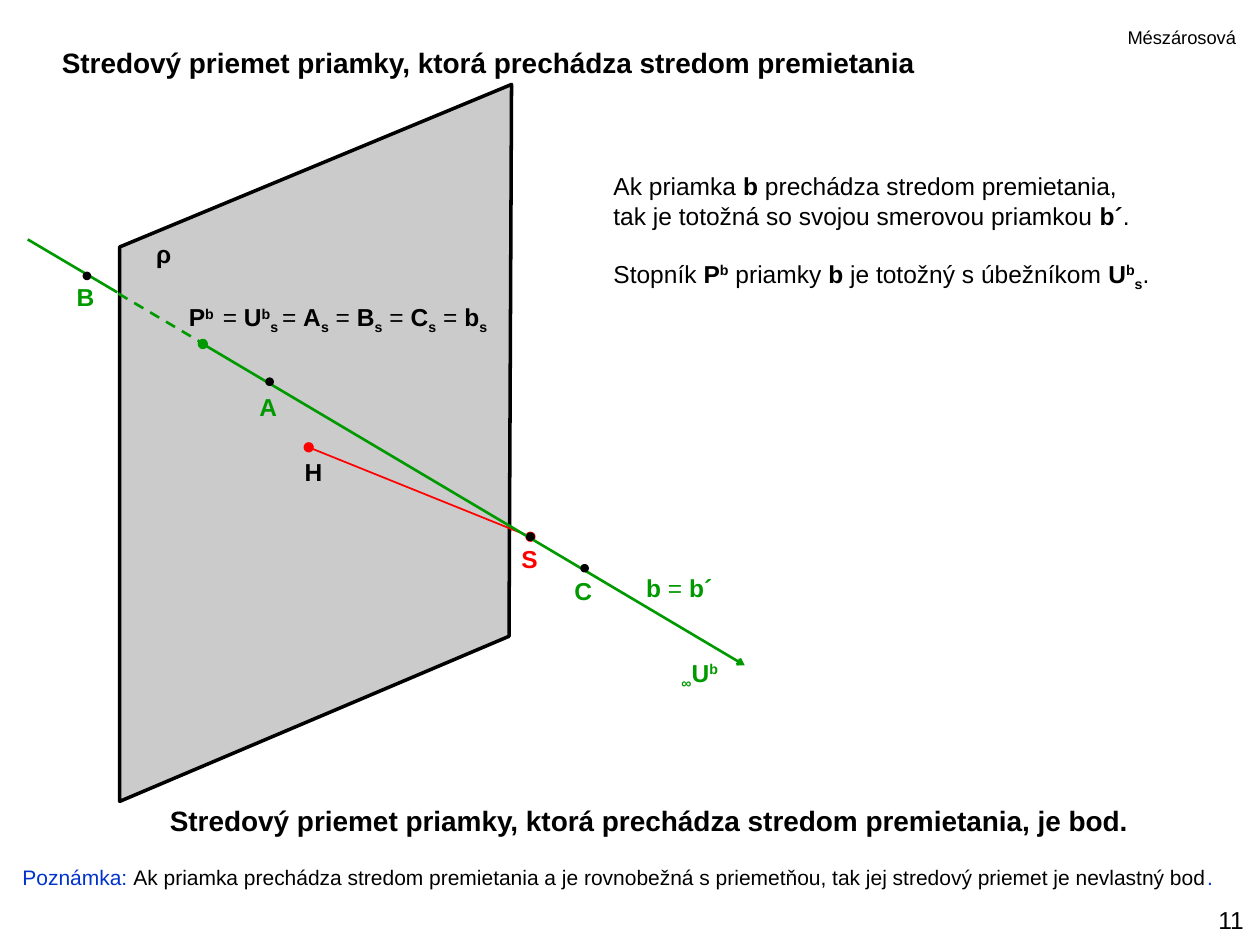
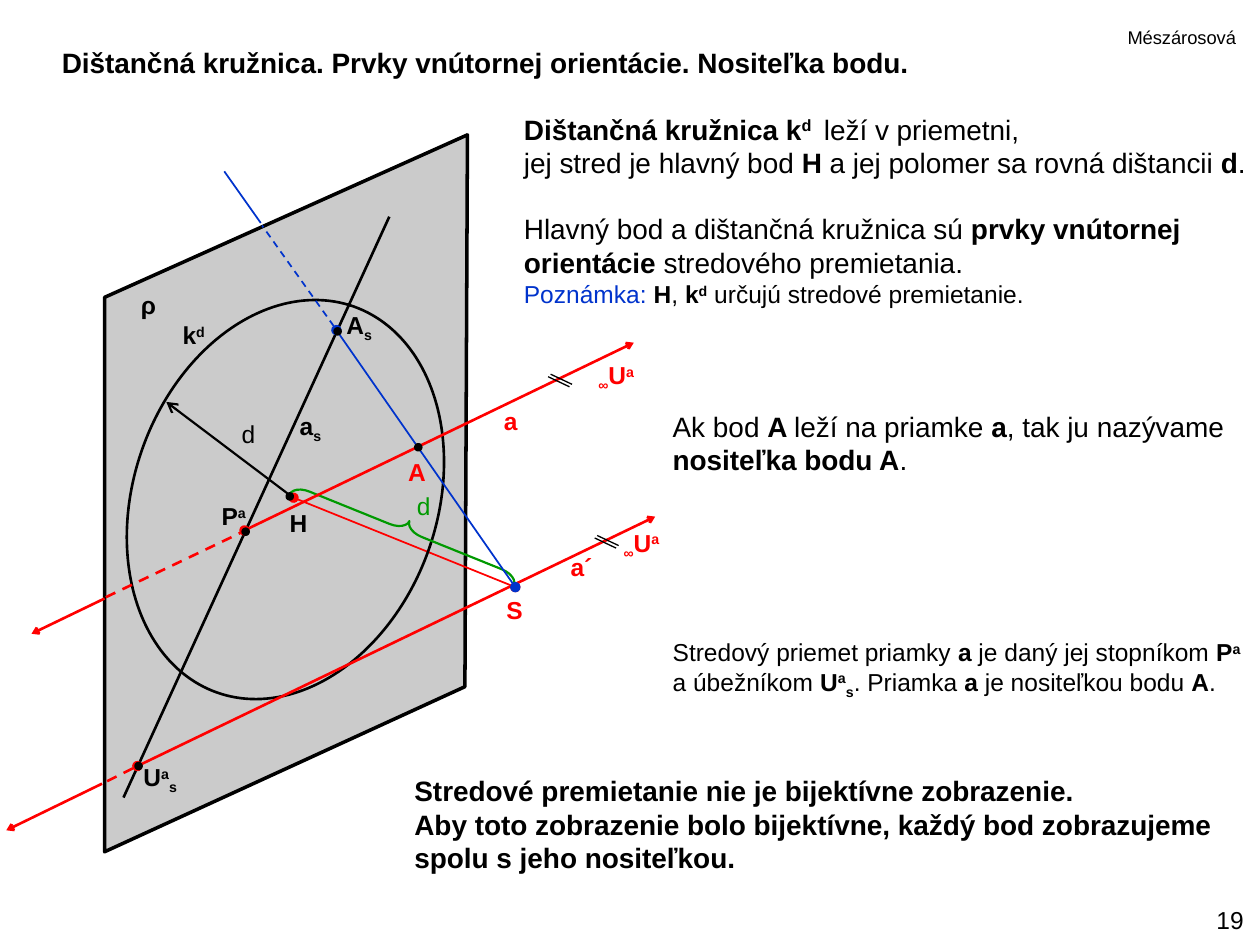
import dataclasses
import itertools

import pptx
import pptx.dml.color
import pptx.enum.dml
import pptx.enum.shapes
import pptx.enum.text
import pptx.oxml.ns
import pptx.util
from lxml import etree


@dataclasses.dataclass(frozen=True)
class Theme:
    """Colours, font, type sizes and line widths shared by the slides."""
    black: str = "000000"
    red: str = "FF0000"
    green: str = "009900"
    blue: str = "0033CC"
    plane: str = "A6A6A6"
    plane_opacity: int = 58
    font: str = "Arial"
    heading: float = 16
    body: float = 14
    remark: float = 12
    author: float = 10.5
    thick: float = 2
    ray: float = 1.5
    measure: float = 1.25
    thin: float = 1
    tick: float = 0.75


THEME = Theme()
COLUMNS, ROWS = 100, 75
WIDTH, HEIGHT = pptx.util.Inches(10), pptx.util.Inches(7.5)
LABEL_ROWS = 3.4
MAIN_POINT, CENTRE = (15, 28.8), (32.6, 35.9)
LINE_ENDS = {"dot": ("oval", "med"), "tip": ("arrow", "sm"), "wide tip": ("arrow", "med")}
MARKS = {"*": "bold", "^": "superscript", "_": "subscript", "~": "note"}


@dataclasses.dataclass(frozen=True)
class Box:
    """Area of the slide measured in grid columns and rows."""
    left: float
    top: float
    width: float
    height: float

    def inside(self, left, top, width, height):
        """Return a box whose place is counted from this box's corner."""
        return Box(self.left + left, self.top + top, width, height)

    def point(self, column, row):
        """Return slide coordinates of a point counted from the corner."""
        return (round((self.left + column) * WIDTH / COLUMNS),
                round((self.top + row) * HEIGHT / ROWS))

    def frame(self):
        """Return left, top, width and height in slide units."""
        return (*self.point(0, 0), round(self.width * WIDTH / COLUMNS),
                round(self.height * HEIGHT / ROWS))


def rgb(colour):
    """Turn a hexadecimal string into a colour."""
    return pptx.dml.color.RGBColor.from_string(colour)


def set_line(line, colour, width):
    """Give an outline its colour and its width in points."""
    line.color.rgb = rgb(colour)
    line.width = pptx.util.Pt(width)


def format_run(run, size, colour, marks=()):
    """Format one run according to its active marks."""
    run.font.name = THEME.font
    run.font.size = pptx.util.Pt(size)
    run.font.bold = "bold" in marks
    run.font.color.rgb = rgb(THEME.blue if "note" in marks else colour)
    baseline = 30 if "superscript" in marks else -25 if "subscript" in marks else 0
    if baseline:
        run.font._element.set("baseline", str(baseline * 1000))


def write_marked(paragraph, text, size, colour):
    """Write text in which marks switch bold, raised, lowered and note style."""
    active, pieces = frozenset(), []
    for character in text:
        if character in MARKS:
            active ^= {MARKS[character]}
        else:
            pieces.append((active, character))
    for marks, group in itertools.groupby(pieces, key=lambda piece: piece[0]):
        run = paragraph.add_run()
        run.text = "".join(character for _, character in group)
        format_run(run, size, colour, marks)


def add_text(slide, box, lines, size=THEME.body, colour=THEME.black, wrap=False, gaps=()):
    """Add a text box with a paragraph per line; gaps maps lines to space before."""
    text_frame = slide.shapes.add_textbox(*box.frame()).text_frame
    text_frame.word_wrap = wrap
    text_frame.auto_size = pptx.enum.text.MSO_AUTO_SIZE.SHAPE_TO_FIT_TEXT
    for index, line in enumerate(lines):
        paragraph = text_frame.add_paragraph() if index else text_frame.paragraphs[0]
        write_marked(paragraph, line, size, colour)
        if index in gaps:
            paragraph.space_before = pptx.util.Pt(size * 1.17)
    return text_frame


def add_labels(slide, box, colour, labels):
    """Add short labels of one colour, given as text, column, row and width."""
    for text, column, row, width in labels:
        add_text(slide, box.inside(column, row, width, LABEL_ROWS), [text], colour=colour)


def add_line(slide, box, start, end, colour, width=THEME.ray, head=None, tail=None, dashed=False):
    """Draw a straight line between two points of the box."""
    connector = slide.shapes.add_connector(
        pptx.enum.shapes.MSO_CONNECTOR.STRAIGHT, *box.point(*start), *box.point(*end))
    set_line(connector.line, colour, width)
    if dashed:
        connector.line.dash_style = pptx.enum.dml.MSO_LINE.DASH
    outline = connector.line._get_or_add_ln()
    for tag, name in (("a:headEnd", head), ("a:tailEnd", tail)):
        if name:
            kind, size = LINE_ENDS[name]
            etree.SubElement(outline, pptx.oxml.ns.qn(tag), type=kind, w=size, len=size)
    etree.SubElement(connector._element.spPr, pptx.oxml.ns.qn("a:effectLst"))


def add_outline(slide, box, kind, colour, width):
    """Add an unfilled preset shape."""
    shape = slide.shapes.add_shape(kind, *box.frame())
    shape.shadow.inherit = False
    shape.fill.background()
    set_line(shape.line, colour, width)
    return shape


def add_dots(slide, box, points):
    """Mark points with small black discs."""
    for column, row in points:
        dot = add_outline(slide, box.inside(column - 0.2, row - 0.2, 0.4, 0.4),
                          pptx.enum.shapes.MSO_SHAPE.OVAL, THEME.black, THEME.thick)
        dot.fill.solid()
        dot.fill.fore_color.rgb = rgb(THEME.black)


def add_projection(slide, box):
    """Draw the image plane with its main point and the projection centre."""
    right = box.width
    builder = slide.shapes.build_freeform(*box.point(0, 12.9))
    corners = [(0, box.height), (right - 0.2, 43.8), (right, 0)]
    builder.add_line_segments([box.point(*corner) for corner in corners])
    plane = builder.convert_to_shape()
    plane.shadow.inherit = False
    plane.fill.solid()
    plane.fill.fore_color.rgb = rgb(THEME.plane)
    colour = plane._element.spPr.find(".//" + pptx.oxml.ns.qn("a:srgbClr"))
    etree.SubElement(colour, pptx.oxml.ns.qn("a:alpha"), val=str(THEME.plane_opacity * 1000))
    set_line(plane.line, THEME.black, THEME.thick)
    add_line(slide, box, MAIN_POINT, CENTRE, THEME.red, THEME.thin, "dot", "dot")
    add_dots(slide, box, [CENTRE])
    add_labels(slide, box, THEME.black, [("*ρ*", 1.9, 11.8, 3.1), ("*H*", 13.7, 29.1, 3.4)])
    add_labels(slide, box, THEME.red, [("*S*", 30.9, 36, 3.3)])


def add_titled_slide(presentation, title, number):
    """Add a slide with its title, author and page number."""
    slide = presentation.slides.add_slide(presentation.slide_layouts[5])
    shape = slide.shapes.title
    shape.left, shape.top, shape.width, shape.height = Box(3.9, 3.1, 71.3, 3.7).frame()
    text_frame = shape.text_frame
    text_frame.text = title
    text_frame.word_wrap = False
    text_frame.auto_size = pptx.enum.text.MSO_AUTO_SIZE.NONE
    text_frame.vertical_anchor = pptx.enum.text.MSO_ANCHOR.TOP
    paragraph = text_frame.paragraphs[0]
    paragraph.alignment = pptx.enum.text.PP_ALIGN.LEFT
    format_run(paragraph.runs[0], THEME.heading, THEME.black, {"bold"})
    add_text(slide, Box(88.5, 1.6, 10.8, 2.8), ["Mészárosová"], THEME.author)
    page = add_text(slide, Box(95.3, 71.3, 4.4, LABEL_ROWS), [number])
    page.paragraphs[0].alignment = pptx.enum.text.PP_ALIGN.RIGHT
    return slide


def add_central_ray(slide, box):
    """Draw line b through the projection centre with its points."""
    add_projection(slide, box)
    add_line(slide, box, (-0.1, 16.6), (6.5, 20.5), THEME.green, dashed=True)
    add_line(slide, box, (-7.3, 12.3), (-0.2, 16.5), THEME.green)
    add_line(slide, box, (6.6, 20.6), (49.6, 46.1), THEME.green, head="dot", tail="tip")
    add_dots(slide, box, [(11.9, 23.6), (-2.6, 15.2), CENTRE, (36.9, 38.4)])
    add_labels(slide, box, THEME.black, [
        ("*P^b^*", 4.5, 16.8, 4.1),
        ("= *U^b^_s_*", 7.2, 16.8, 6.6),
        ("= *A_s_* = *B_s_* = *C_s_* = *b_s_*", 11.9, 16.8, 18.8)])
    add_labels(slide, box, THEME.green, [
        ("*b* = *b´*", 40.8, 38.3, 7.8), ("*_∞_U^b^*", 43.6, 45, 5.2),
        ("*A*", 10.1, 23.9, 3.4), ("*B*", -4.4, 15.2, 3.4), ("*C*", 35.1, 38.5, 3.4)])


def add_distance_circle(slide, box):
    """Draw the distance circle, its radius and the matching brace."""
    circle = add_outline(slide, box.inside(2.3, 12.7, 24.1, 32.5),
                         pptx.enum.shapes.MSO_SHAPE.OVAL, THEME.black, THEME.ray)
    circle.rotation = 19.5
    add_line(slide, box, (4.9, 21.2), (14.7, 28.6), THEME.black, THEME.measure, head="wide tip")
    brace = add_outline(slide, box.inside(23.1, 21.8, 1.6, 19.2),
                        pptx.enum.shapes.MSO_SHAPE.RIGHT_BRACE, THEME.green, THEME.measure)
    brace.adjustments[0], brace.adjustments[1] = 0.85, 0.5
    brace.rotation = 112
    brace._element.spPr.xfrm.set("flipH", "1")
    add_labels(slide, box, THEME.black, [("*k^d^*", 5.2, 14.2, 4.1), ("d", 9.9, 22.1, 3.1)])
    add_labels(slide, box, THEME.green, [("d", 23.8, 27.8, 3.1)])


def add_carrier_rays(slide, box):
    """Draw line a, its direction line, the projecting ray and their points."""
    for start, end in [((0.2, 51.3), (2.6, 50.1)), ((0.1, 36.7), (11.4, 31.3))]:
        add_line(slide, box, start, end, THEME.red, dashed=True)
    for start, end in [((0, 36.8), (-5.8, 39.6)), ((-0.2, 51.5), (-7.8, 55.2))]:
        add_line(slide, box, start, end, THEME.red, tail="tip")
    add_line(slide, box, (22.6, 6.5), (1.5, 52.6), THEME.black)
    for start, end in [((2.6, 50.1), (43.7, 30.3)), ((11.1, 31.4), (42, 16.5))]:
        add_line(slide, box, start, end, THEME.red, head="dot", tail="tip")
    add_line(slide, box, (18.2, 15.2), (12.5, 7.2), THEME.blue, THEME.thin, dashed=True)
    add_line(slide, box, (12.4, 7), (9.5, 2.9), THEME.blue, THEME.thin)
    add_line(slide, box, CENTRE, (18.4, 15.5), THEME.blue, THEME.thin, "dot", "dot")
    for column, row in [(35.4, 19), (39.1, 31.8)]:
        for shift in (0, 0.2):
            add_line(slide, box, (column - shift, row + shift),
                     (column - shift + 1.7, row + shift + 0.8), THEME.black, THEME.tick)
    add_dots(slide, box, [(24.9, 24.8), (14.7, 28.7), (2.7, 50.1), (11.2, 31.5), (18.5, 15.6)])
    add_labels(slide, box, THEME.black, [
        ("*P^a^*", 8.3, 28.6, 4.1), ("*A_s_*", 18.2, 13.4, 4.7),
        ("*U^a^_s_*", 2.1, 49.3, 4.9), ("*a_s_*", 14.5, 21.4, 3.8)])
    add_labels(slide, box, THEME.red, [
        ("*a*", 30.7, 21, 3.1), ("*a´*", 36, 32.6, 3.8), ("*A*", 23.1, 25.1, 3.4),
        ("*_∞_U^a^*", 38.2, 17.4, 5.1), ("*_∞_U^a^*", 40.2, 30.7, 5.1)])


def build_central_line_slide(presentation):
    """Build the slide about a line through the projection centre."""
    slide = add_titled_slide(
        presentation, "Stredový priemet priamky, ktorá prechádza stredom premietania", "11")
    add_central_ray(slide, Box(9.5, 6.7, 31.1, 56.9))
    add_text(slide, Box(47.7, 13.1, 46.2, 10.4), [
        "Ak priamka *b *prechádza stredom premietania,",
        "tak je totožná so svojou smerovou priamkou *b´*.",
        "Stopník *P^b^* priamky *b *je totožný s úbežníkom *U^b^_s_*."], gaps={2})
    add_text(slide, Box(12.5, 63.3, 81, 3.7), [
        "*Stredový priemet priamky, ktorá prechádza stredom premietania, je bod.*"], THEME.heading)
    add_text(slide, Box(0.8, 68.1, 97.2, 3), [
        "~Poznámka: ~Ak priamka prechádza stredom premietania a je rovnobežná "
        "s priemetňou, tak jej stredový priemet je nevlastný bod~.~"], THEME.remark)


def build_distance_circle_slide(presentation):
    """Build the slide about the distance circle and the carrier of a point."""
    slide = add_titled_slide(
        presentation, "Dištančná kružnica. Prvky vnútornej orientácie. Nositeľka bodu.", "19")
    diagram = Box(8.3, 10.7, 28.8, 56.9)
    add_projection(slide, diagram)
    add_distance_circle(slide, diagram)
    add_carrier_rays(slide, diagram)
    definition = add_text(slide, Box(40.6, 8.4, 59.4, 16.8), [
        "*Dištančná kružnica k^d ^* leží v priemetni,",
        "jej stred je hlavný bod *H *a jej polomer sa rovná dištancii *d*.",
        "Hlavný bod a dištančná kružnica sú *prvky vnútornej orientácie *stredového premietania.",
        "~Poznámka: ~*H*, *k^d^* určujú stredové premietanie."],
        THEME.heading, wrap=True, gaps={2})
    for run in definition.paragraphs[3].runs:
        run.font.size = pptx.util.Pt(THEME.body)
    add_text(slide, Box(52.4, 32, 47.2, 6.4), [
        "Ak bod *A *leží na priamke *a*, tak ju nazývame *nositeľka bodu A*."],
        THEME.heading, wrap=True)
    add_text(slide, Box(52.4, 50.1, 47.5, 5.7), [
        "Stredový priemet priamky *a* je daný jej stopníkom *P^a^*",
        "a úbežníkom *U^a^_s_*. Priamka *a *je nositeľkou bodu *A*."], wrap=True)
    add_text(slide, Box(31.9, 60.9, 68.1, 9.1), [
        "*Stredové premietanie nie je bijektívne zobrazenie.*",
        "*Aby toto zobrazenie bolo bijektívne, každý bod zobrazujeme*",
        "*spolu s jeho nositeľkou.*"], THEME.heading, wrap=True)


def main():
    """Build and save the presentation."""
    presentation = pptx.Presentation()
    presentation.slide_width, presentation.slide_height = WIDTH, HEIGHT
    build_central_line_slide(presentation)
    build_distance_circle_slide(presentation)
    presentation.save("out.pptx")


if __name__ == "__main__":
    main()
